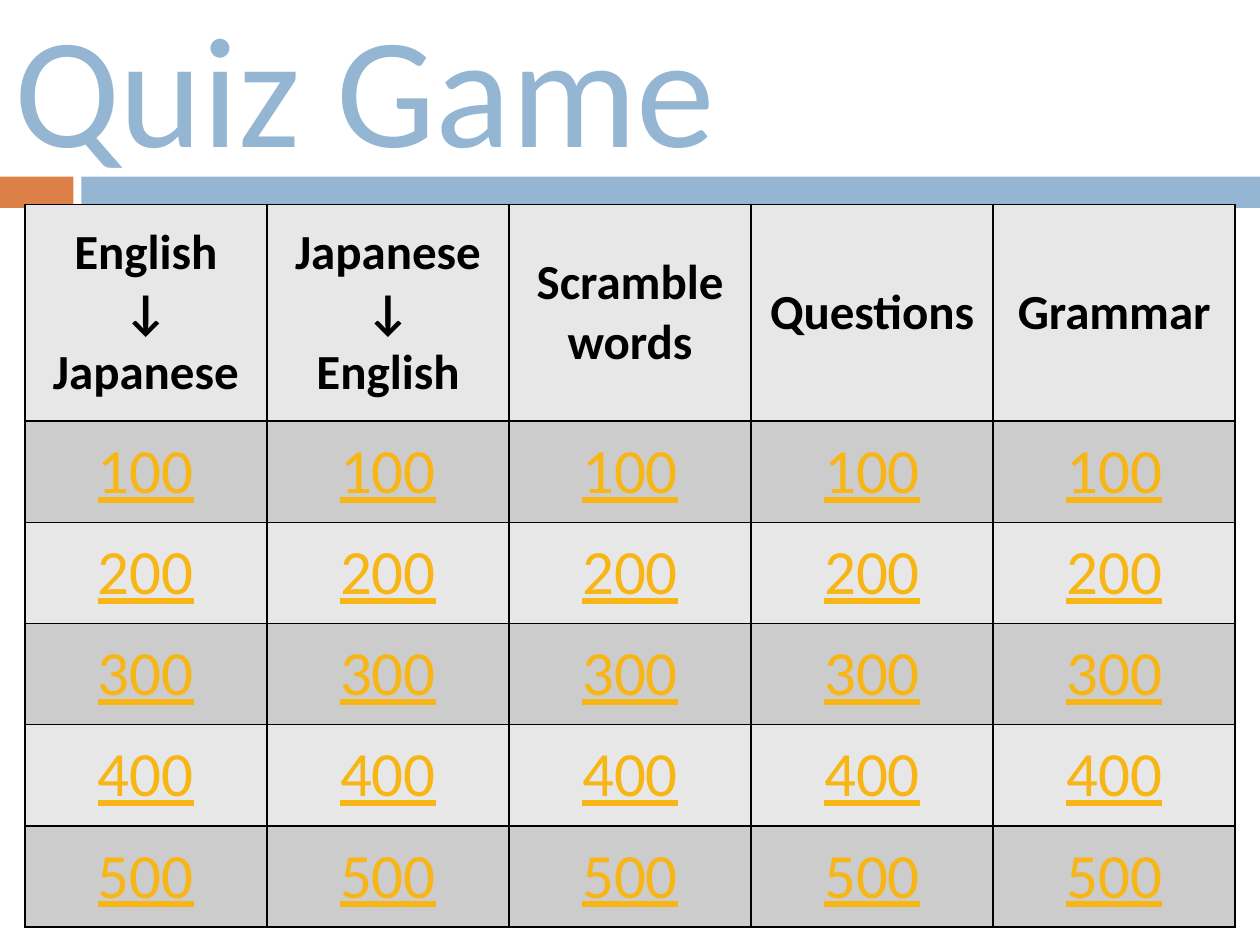
from lxml import etree
from pptx import Presentation
from pptx.dml.color import RGBColor
from pptx.enum.shapes import MSO_SHAPE
from pptx.enum.text import MSO_ANCHOR, MSO_AUTO_SIZE, PP_ALIGN
from pptx.oxml.ns import qn
from pptx.util import Cm, Pt

RECTANGLE = MSO_SHAPE.RECTANGLE
MIDDLE = MSO_ANCHOR.MIDDLE
NO_AUTOFIT = MSO_AUTO_SIZE.NONE
LEFT, CENTER = PP_ALIGN.LEFT, PP_ALIGN.CENTER

BLUE = RGBColor(0x94, 0xB6, 0xD2)
ORANGE = RGBColor(0xDD, 0x80, 0x47)
GOLD = RGBColor(0xF7, 0xB6, 0x15)
BLACK = RGBColor(0, 0, 0)
LIGHT_GRAY = RGBColor(0xE7, 0xE7, 0xE7)
MID_GRAY = RGBColor(0xCC, 0xCC, 0xCC)
FONT = "Calibri"

HEADING = "Quiz Game"
CATEGORIES = [
    "English\n↓\nJapanese",
    "Japanese\n↓\nEnglish",
    "Scramble words",
    "Questions",
    "Grammar",
]
POINTS = [100, 200, 300, 400, 500]
BANDS = [(0, 1.48, ORANGE), (1.64, 23.76, BLUE)]

BAND_TOP, BAND_HEIGHT = 3.56, 0.63
BOARD_LEFT, BOARD_TOP = 0.5, 4.12
COLUMN_WIDTH, HEADER_HEIGHT, POINTS_HEIGHT = 4.88, 4.37, 2.04


def style_text(frame, size, color, align, bold=False, underline=False):
    for paragraph in frame.paragraphs:
        paragraph.alignment = align
        for run in paragraph.runs:
            font = run.font
            font.name = FONT
            font.size = Pt(size)
            font.bold = bold
            font.underline = underline
            font.color.rgb = color


def add_borders(cell):
    properties = cell._tc.get_or_add_tcPr()
    for position, side in enumerate(("a:lnL", "a:lnR", "a:lnT", "a:lnB")):
        border = etree.Element(qn(side), w=str(Pt(1)))
        fill = etree.SubElement(border, qn("a:solidFill"))
        etree.SubElement(fill, qn("a:srgbClr"), val=str(BLACK))
        properties.insert(position, border)


def add_bands(slide):
    for left, width, color in BANDS:
        band = slide.shapes.add_shape(
            RECTANGLE, Cm(left), Cm(BAND_TOP), Cm(width), Cm(BAND_HEIGHT))
        band.shadow.inherit = False
        band.fill.solid()
        band.fill.fore_color.rgb = color
        band.line.fill.background()


def add_heading(slide):
    heading = slide.shapes.title
    heading.left, heading.top = Cm(0.03), Cm(0.53)
    heading.width, heading.height = Cm(25.4), Cm(2.36)
    frame = heading.text_frame
    frame.text = HEADING
    frame.auto_size = NO_AUTOFIT
    frame.vertical_anchor = MIDDLE
    style_text(frame, 90, BLUE, LEFT)


def add_board(slide):
    rows = [CATEGORIES] + [[str(value)] * len(CATEGORIES) for value in POINTS]
    heights = [HEADER_HEIGHT] + [POINTS_HEIGHT] * len(POINTS)
    board = slide.shapes.add_table(
        len(rows), len(CATEGORIES), Cm(BOARD_LEFT), Cm(BOARD_TOP),
        Cm(COLUMN_WIDTH * len(CATEGORIES)), Cm(sum(heights))).table
    for column in board.columns:
        column.width = Cm(COLUMN_WIDTH)
    for index, (labels, height) in enumerate(zip(rows, heights)):
        board.rows[index].height = Cm(height)
        for cell, label in zip(board.rows[index].cells, labels):
            cell.text_frame.text = label
            cell.vertical_anchor = MIDDLE
            cell.fill.solid()
            cell.fill.fore_color.rgb = MID_GRAY if index % 2 else LIGHT_GRAY
            add_borders(cell)
            if index == 0:
                style_text(cell.text_frame, 28, BLACK, CENTER, bold=True)
            else:
                style_text(cell.text_frame, 36, GOLD, CENTER, underline=True)


def main():
    deck = Presentation()
    deck.slide_width, deck.slide_height = Cm(25.4), Cm(19.05)
    slide = deck.slides.add_slide(deck.slide_layouts[5])
    add_bands(slide)
    add_heading(slide)
    add_board(slide)
    deck.save("out.pptx")


if __name__ == "__main__":
    main()
